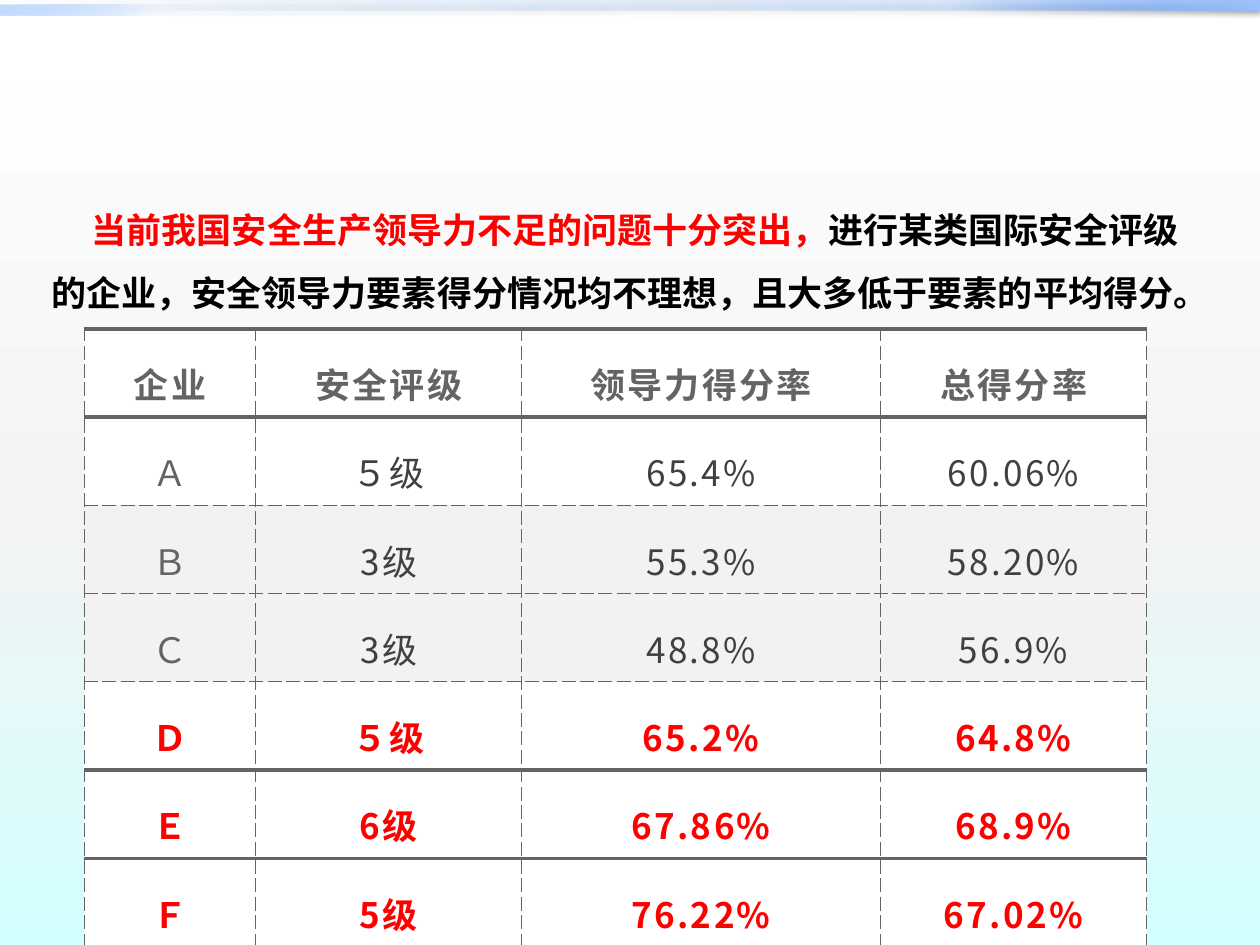
from lxml import etree
from pptx import Presentation, util as u
from pptx.dml.color import RGBColor
from pptx.enum import shapes, text
from pptx.oxml.ns import qn

FONT = "Noto Sans CJK SC"
COLORS = {
    "white": "FFFFFF", "black": "000000", "red": "FF0000",
    "gray": "646464", "dark": "404040", "band": "F2F2F2",
    "mist": "F3F3F3", "aqua": "D2FFFF",
    "deep": "0058B7", "blue": "4F95FF", "sky": "9EC2FF",
}
WIDTH, HEIGHT = 10, 7.5

# Gradient stops: position %, colour, opacity %
BACKGROUND = [(0, "white", 100), (55, "mist", 100), (100, "aqua", 100)]
# Top bars: left, top, width, height, gradient angle, stops, has shadow
BARS = [
    (0, 0, WIDTH, 0.08, 315, [(0, "deep", 0), (75, "blue", 20), (100, "sky", 100)], True),
    (0, 0.04, WIDTH / 2, 0.08, 135, [(0, "deep", 0), (75, "blue", 5), (100, "sky", 60)], False),
]
INTRO = [
    ("当前我国安全生产领导力不足的问题十分突出，", "red"),
    ("进行某类国际安全评级的企业，安全领导力要素得分情况均不理想，且大多低于要素的平均得分。", "black"),
]
SCORES = [
    ("企业", "安全评级", "领导力得分率", "总得分率"),
    ("Ａ", "５级", "65.4%", "60.06%"),
    ("Ｂ", "3级", "55.3%", "58.20%"),
    ("Ｃ", "3级", "48.8%", "56.9%"),
    ("Ｄ", "５级", "65.2%", "64.8%"),
    ("Ｅ", "6级", "67.86%", "68.9%"),
    ("Ｆ", "5级", "76.22%", "67.02%"),
]
COLUMNS = [1.36, 2.11, 2.85, 2.11]
TABLE_LEFT, TABLE_TOP, TABLE_HEIGHT = 0.67, 2.61, 4.84
BANDED_ROWS = (2, 3)
FIRST_RED_ROW = 4
DASHED_RULES = (2, 3, 4)  # horizontal rules, counted from the table top
THIN, THICK = (0.75, "sysDash"), (2.25, "solid")


def rgb(name):
    return RGBColor.from_string(COLORS[name])


def add_color(parent, name, opacity=100):
    color = etree.SubElement(parent, qn("a:srgbClr"), val=COLORS[name])
    if opacity < 100:
        etree.SubElement(color, qn("a:alpha"), val=str(opacity * 1000))


def set_gradient(fill, element, stops, angle):
    """Give the fill found inside element its stops; angle runs clockwise."""
    fill.gradient()
    gradient = element.find(".//" + qn("a:gradFill"))
    for child in list(gradient):
        gradient.remove(child)
    stop_list = etree.SubElement(gradient, qn("a:gsLst"))
    for position, name, opacity in stops:
        stop = etree.SubElement(stop_list, qn("a:gs"), pos=str(position * 1000))
        add_color(stop, name, opacity)
    etree.SubElement(gradient, qn("a:lin"), ang=str(angle * 60000), scaled="0")


def add_span(para, words, *, color, bold=True, size=20, spacing=0):
    span = para.add_run()
    span.text = words
    span.font.size, span.font.bold = u.Pt(size), bold
    span.font.color.rgb = rgb(color)
    span.font.name = FONT
    properties = span.font._element
    etree.SubElement(properties, qn("a:ea"), typeface=FONT)
    if spacing:
        properties.set("spc", str(round(spacing * 100)))


def add_bar(page, left, top, width, height, angle, stops, shadow):
    bar = page.shapes.add_shape(shapes.MSO_SHAPE.RECTANGLE,
                                *map(u.Inches, (left, top, width, height)))
    set_gradient(bar.fill, bar.element, stops, angle)
    bar.line.fill.background()
    bar.shadow.inherit = False
    if shadow:
        effects = bar.element.find(".//" + qn("a:effectLst"))
        outer = etree.SubElement(effects, qn("a:outerShdw"), blurRad=str(u.Pt(3.1)),
                                 dist=str(u.Pt(1.6)), dir="5400000", rotWithShape="0")
        add_color(outer, "black", 38)


def add_intro(page):
    box = page.shapes.add_textbox(*map(u.Inches, (0.31, 1.44, 9.38, 1.11)))
    box.text_frame.word_wrap = True
    para = box.text_frame.paragraphs[0]
    para.line_spacing = u.Pt(36)
    para._p.get_or_add_pPr().set("indent", str(u.Inches(0.32)))
    for words, color in INTRO:
        add_span(para, words, color=color)


def set_borders(cell, row):
    properties = cell._tc.get_or_add_tcPr()
    above, below = (THIN if rule in DASHED_RULES else THICK for rule in (row, row + 1))
    for side, (weight, dash) in zip("LRTB", (THIN, THIN, above, below)):
        line = etree.SubElement(properties, qn("a:ln" + side), w=str(u.Pt(weight)))
        add_color(etree.SubElement(line, qn("a:solidFill")), "gray")
        etree.SubElement(line, qn("a:prstDash"), val=dash)


def cell_format(row, column):
    if row >= FIRST_RED_ROW:
        return {"color": "red", "bold": True}
    if row == 0:
        return {"color": "gray", "bold": True}
    return {"color": "dark" if column else "gray", "bold": False}


def add_scores(page):
    frame = page.shapes.add_table(
        len(SCORES), len(COLUMNS),
        *map(u.Inches, (TABLE_LEFT, TABLE_TOP, sum(COLUMNS), TABLE_HEIGHT)))
    table = frame.table
    table.first_row = table.horz_banding = False
    for column, width in zip(table.columns, COLUMNS):
        column.width = u.Inches(width)
    for row, values in enumerate(SCORES):
        table.rows[row].height = u.Inches(TABLE_HEIGHT / len(SCORES))
        for column, words in enumerate(values):
            cell = table.cell(row, column)
            cell.margin_left = cell.margin_right = u.Inches(0.24)
            cell.margin_top = cell.margin_bottom = u.Inches(0.15)
            cell.vertical_anchor = text.MSO_ANCHOR.MIDDLE
            set_borders(cell, row)
            cell.fill.solid()
            cell.fill.fore_color.rgb = rgb("band" if row in BANDED_ROWS else "white")
            para = cell.text_frame.paragraphs[0]
            para.alignment = text.PP_ALIGN.CENTER
            para.line_spacing = 1.2
            add_span(para, words, spacing=1.3, **cell_format(row, column))


def main():
    deck = Presentation()
    deck.slide_width, deck.slide_height = u.Inches(WIDTH), u.Inches(HEIGHT)
    page = deck.slides.add_slide(deck.slide_layouts.get_by_name("Blank"))
    set_gradient(page.background.fill, page.element, BACKGROUND, 90)
    for bar in BARS:
        add_bar(page, *bar)
    add_intro(page)
    add_scores(page)
    deck.save("out.pptx")


if __name__ == "__main__":
    main()
